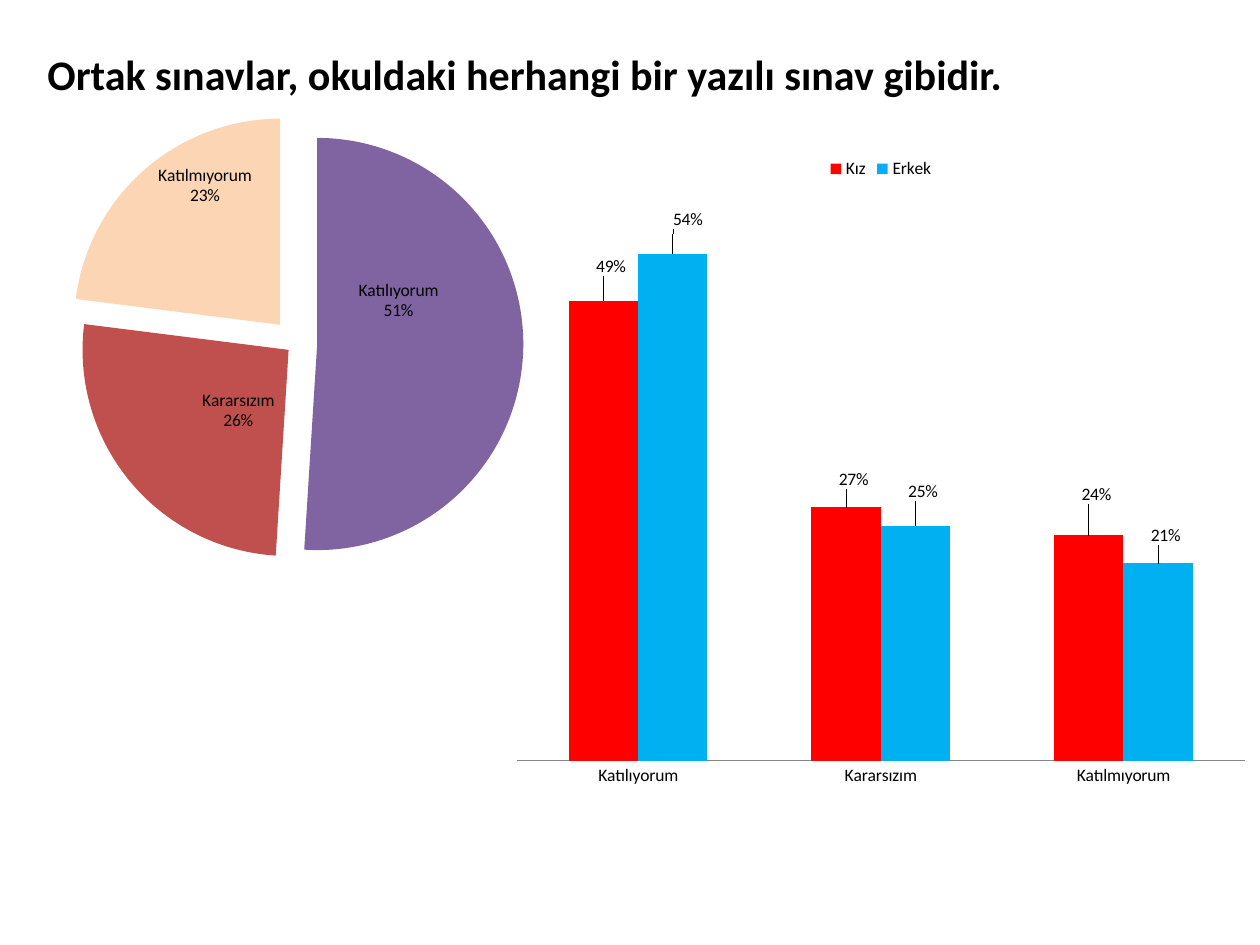
from dataclasses import dataclass

from lxml import etree
from pptx import Presentation
from pptx.chart.data import CategoryChartData
from pptx.dml.color import RGBColor
from pptx.enum.chart import XL_CHART_TYPE, XL_LABEL_POSITION, XL_LEGEND_POSITION, XL_TICK_MARK
from pptx.enum.text import MSO_ANCHOR
from pptx.oxml import parse_xml
from pptx.util import Pt

PIE = XL_CHART_TYPE.PIE
COLUMNS = XL_CHART_TYPE.COLUMN_CLUSTERED
CENTER = XL_LABEL_POSITION.CENTER
OUTSIDE_END = XL_LABEL_POSITION.OUTSIDE_END
TOP = XL_LEGEND_POSITION.TOP
NO_TICKS = XL_TICK_MARK.NONE
MIDDLE = MSO_ANCHOR.MIDDLE

CHART_NS = "http://schemas.openxmlformats.org/drawingml/2006/chart"
FONT = "Calibri"
BLACK = "000000"
AXIS_GRAY = "868686"
ANSWERS = ("Katılıyorum", "Kararsızım", "Katılmıyorum")


@dataclass(frozen=True)
class Box:
    left: float
    top: float
    width: float
    height: float

    def lengths(self):
        return Pt(self.left), Pt(self.top), Pt(self.width), Pt(self.height)


@dataclass(frozen=True)
class Slice:
    percent: int
    color: str
    explosion: int
    label_shift: tuple[float, float]


@dataclass(frozen=True)
class Group:
    name: str
    shares: tuple[float, ...]
    color: str
    label_shifts: tuple[tuple[float, float], ...]


SLICES = (
    Slice(51, "8064A2", 10, (-0.03, -0.09)),
    Slice(26, "C0504D", 5, (0.04, -0.01)),
    Slice(23, "FCD5B5", 12, (-0.01, -0.12)),
)
GROUPS = (
    Group("Kız", (0.49, 0.27, 0.24), "FF0000", ((0.01, -0.03), (0.01, -0.02), (0.01, -0.04))),
    Group("Erkek", (0.54, 0.25, 0.21), "00B0F0", ((0.02, -0.03), (0.01, -0.03), (0.01, -0.02))),
)


def rgb(hex_color: str) -> RGBColor:
    return RGBColor.from_string(hex_color)


def style_font(font, size: float) -> None:
    font.name = FONT
    font.size = Pt(size)
    font.color.rgb = rgb(BLACK)


def paint(fill, hex_color: str) -> None:
    fill.solid()
    fill.fore_color.rgb = rgb(hex_color)


def manual_layout(x: float, y: float, width: float = 0, height: float = 0):
    fields = {"x": x, "y": y}
    if width:
        fields = {"layoutTarget": "inner", "xMode": "edge", "yMode": "edge",
                  **fields, "w": width, "h": height}
    body = "".join(f'<c:{tag} val="{value}"/>' for tag, value in fields.items())
    return parse_xml(f'<c:layout xmlns:c="{CHART_NS}"><c:manualLayout>{body}'
                     "</c:manualLayout></c:layout>")


def place_plot(chart, box: tuple[float, float, float, float]) -> None:
    plot_area = chart.element.find(f".//{{{CHART_NS}}}plotArea")
    for previous in plot_area.findall(f"{{{CHART_NS}}}layout"):
        plot_area.remove(previous)
    plot_area.insert(0, manual_layout(*box))


def place_label(series, index: int, position, shift: tuple[float, float]):
    series.points[index].data_label.position = position
    label = series._element.xpath(f'.//c:dLbl[c:idx/@val="{index}"]')[0]
    label.insert(1, manual_layout(*shift))
    return label


def add_chart(slide, kind, box: Box, data: CategoryChartData):
    chart = slide.shapes.add_chart(kind, *box.lengths(), data).chart
    chart.has_title = False
    chart.has_legend = False
    style_font(chart.font, 10)
    return chart


def draw_title(slide, box: Box, wording: str) -> None:
    frame = slide.shapes.add_textbox(*box.lengths()).text_frame
    frame.word_wrap = True
    frame.vertical_anchor = MIDDLE
    heading = frame.paragraphs[0]
    heading.text = wording
    style_font(heading.font, 24)
    heading.font.bold = True


def draw_pie(slide, box: Box) -> None:
    data = CategoryChartData(number_format="General")
    data.categories = ANSWERS
    data.add_series("Series 1", [part.percent for part in SLICES])
    chart = add_chart(slide, PIE, box, data)
    place_plot(chart, (0.13, 0.1, 0.82, 0.8))
    chart.plots[0].vary_by_categories = True
    series = chart.plots[0].series[0]
    for index, part in enumerate(SLICES):
        paint(series.points[index].format.fill, part.color)
        point = series._element.xpath(f'./c:dPt[c:idx/@val="{index}"]')[0]
        explosion = etree.Element(f"{{{CHART_NS}}}explosion", val=str(part.explosion))
        point.find(f"{{{CHART_NS}}}spPr").addprevious(explosion)
        label = place_label(series, index, CENTER, part.label_shift)
        for tag, shown in (("showVal", "0"), ("showCatName", "1"), ("showPercent", "1")):
            label.find(f"{{{CHART_NS}}}{tag}").set("val", shown)
        etree.SubElement(label, f"{{{CHART_NS}}}separator").text = "\n"


def draw_columns(slide, box: Box) -> None:
    data = CategoryChartData(number_format="0%")
    data.categories = ANSWERS
    for group in GROUPS:
        data.add_series(group.name, group.shares)
    chart = add_chart(slide, COLUMNS, box, data)
    place_plot(chart, (0.02, 0.08, 0.96, 0.86))
    chart.has_legend = True
    chart.legend.position = TOP
    chart.legend.include_in_layout = False
    shares_axis = chart.value_axis
    shares_axis.minimum_scale = 0
    shares_axis.maximum_scale = 0.6
    shares_axis.has_major_gridlines = False
    shares_axis.visible = False
    answers_axis = chart.category_axis
    answers_axis.major_tick_mark = NO_TICKS
    answers_axis.format.line.color.rgb = rgb(AXIS_GRAY)
    plot = chart.plots[0]
    plot.vary_by_categories = False
    plot.gap_width = 150
    plot.overlap = 0
    for series, group in zip(plot.series, GROUPS):
        paint(series.format.fill, group.color)
        for index, shift in enumerate(group.label_shifts):
            place_label(series, index, OUTSIDE_END, shift)


def main() -> None:
    deck = Presentation()
    deck.slide_width, deck.slide_height = Pt(720), Pt(540)
    slide = deck.slides.add_slide(deck.slide_layouts[6])
    draw_title(slide, Box(20, 24, 720, 36),
               "Ortak sınavlar, okuldaki herhangi bir yazılı sınav gibidir.")
    draw_pie(slide, Box(-54, 49, 414, 294.5))
    draw_columns(slide, Box(286.6, 82.8, 433.4, 374.4))
    deck.save("out.pptx")


if __name__ == "__main__":
    main()
